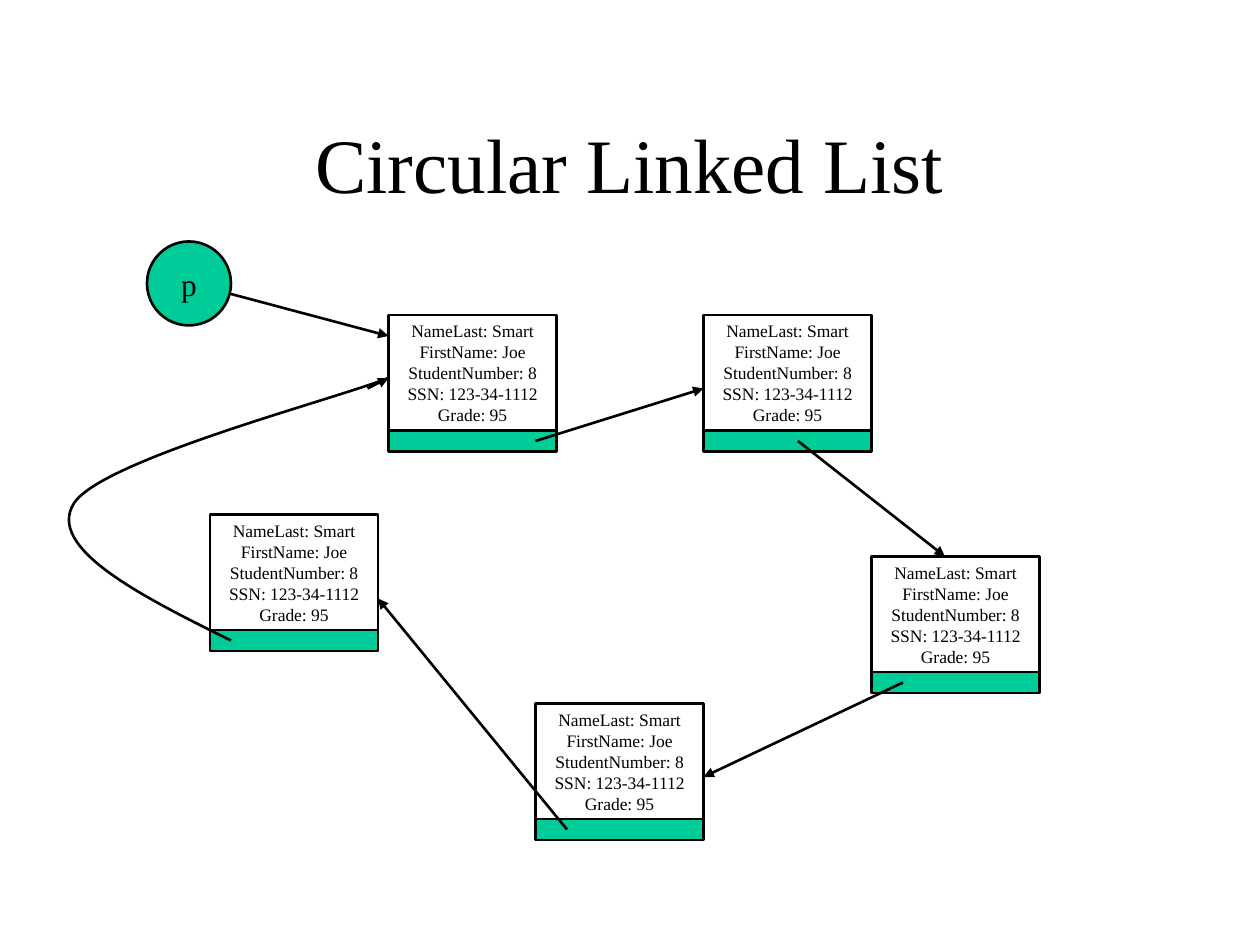
from typing import NamedTuple

from lxml import etree
from pptx import Presentation
from pptx.dml.color import RGBColor
from pptx.enum.shapes import MSO_CONNECTOR, MSO_SHAPE
from pptx.enum.text import MSO_ANCHOR, PP_ALIGN
from pptx.oxml.ns import qn
from pptx.util import Pt

RECT, OVAL = MSO_SHAPE.RECTANGLE, MSO_SHAPE.OVAL
STRAIGHT = MSO_CONNECTOR.STRAIGHT
MIDDLE, CENTER = MSO_ANCHOR.MIDDLE, PP_ALIGN.CENTER
TITLE_ONLY = 5

FONT = "Times New Roman"
COLORS = {"ink": "000000", "paper": "FFFFFF", "green": "00CC99"}
LINE_WIDTH = 1.5
NODE_WIDTH, DATA_HEIGHT, LINK_HEIGHT = 96, 66, 12
RECORD = ["NameLast: Smart", "FirstName: Joe", "StudentNumber: 8",
          "SSN: 123-34-1112", "Grade: 95"]


class Node(NamedTuple):
    left: float
    top: float


class Arrow(NamedTuple):
    x1: float
    y1: float
    x2: float
    y2: float


NODES = [Node(120, 294), Node(222, 180), Node(306, 402),
         Node(498, 318), Node(402, 180)]
LINKS = [Arrow(456, 252, 540, 318), Arrow(306, 252, 402, 222),
         Arrow(516, 390, 402, 444), Arrow(324, 474, 216, 342)]
# Start point, then three Bezier points for each segment
RETURN_CURVE = [(132, 366), (79, 340), (27, 313), (42, 288),
                (57, 263), (192, 228), (222, 216)]
RETURN_HEAD = Arrow(210, 222, 222, 216)
POINTER = Arrow(132, 168, 222, 192)


def rgb(name: str) -> RGBColor:
    return RGBColor.from_string(COLORS[name])


def set_line(sp) -> None:
    sp.line.color.rgb = rgb("ink")
    sp.line.width = Pt(LINE_WIDTH)


def set_text(tf, lines: list[str], size: float) -> None:
    tf.text = "\n".join(lines)
    tf.vertical_anchor = MIDDLE
    for p in tf.paragraphs:
        p.alignment = CENTER
        p.font.name = FONT
        p.font.size = Pt(size)
        p.font.color.rgb = rgb("ink")


def add_box(shapes, kind, left: float, top: float, width: float,
            height: float, fill: str):
    sp = shapes.add_shape(kind, Pt(left), Pt(top), Pt(width), Pt(height))
    sp.shadow.inherit = False
    sp.fill.solid()
    sp.fill.fore_color.rgb = rgb(fill)
    set_line(sp)
    sp.text_frame.word_wrap = False
    return sp


def add_node(shapes, node: Node) -> None:
    group = shapes.add_group_shape().shapes
    add_box(group, RECT, node.left, node.top + DATA_HEIGHT,
            NODE_WIDTH, LINK_HEIGHT, "green")
    data = add_box(group, RECT, node.left, node.top,
                   NODE_WIDTH, DATA_HEIGHT, "paper")
    data.text_frame.margin_top = data.text_frame.margin_bottom = 0
    set_text(data.text_frame, RECORD, 10)


def add_arrow(shapes, arrow: Arrow) -> None:
    cxn = shapes.add_connector(STRAIGHT, *(Pt(v) for v in arrow))
    set_line(cxn)
    etree.SubElement(cxn.line._get_or_add_ln(), qn("a:tailEnd"), type="triangle")
    etree.SubElement(cxn._element.spPr, qn("a:effectLst"))


def add_curve(shapes, points: list[tuple[float, float]]) -> None:
    start, *rest = [(Pt(x), Pt(y)) for x, y in points]
    builder = shapes.build_freeform(*start)
    builder.add_line_segments(rest, close=False)
    sp = builder.convert_to_shape()
    sp.shadow.inherit = False
    sp.fill.background()
    set_line(sp)
    # Turn each three straight segments into one cubic Bezier
    segments = list(sp._element.iter(qn("a:lnTo")))
    for i in range(0, len(segments), 3):
        curve = etree.Element(qn("a:cubicBezTo"))
        segments[i].addprevious(curve)
        for segment in segments[i:i + 3]:
            curve.append(segment[0])
            segment.getparent().remove(segment)


def main() -> None:
    prs = Presentation()
    prs.slide_width, prs.slide_height = Pt(720), Pt(540)
    s = prs.slides.add_slide(prs.slide_layouts[TITLE_ONLY])

    # Title
    title = s.shapes.title
    title.left, title.top, title.width, title.height = map(Pt, (54, 48, 612, 90))
    set_text(title.text_frame, ["Circular Linked List"], 44)

    # Nodes and the links between them
    for node in NODES:
        add_node(s.shapes, node)
    for link in LINKS:
        add_arrow(s.shapes, link)

    # Link from the last node back to the first
    add_curve(s.shapes, RETURN_CURVE)
    add_arrow(s.shapes, RETURN_HEAD)

    # Pointer to the first node
    circle = add_box(s.shapes, OVAL, 84, 138, 48, 48, "green")
    set_text(circle.text_frame, ["p"], 18)
    add_arrow(s.shapes, POINTER)

    prs.save("out.pptx")


if __name__ == "__main__":
    main()
